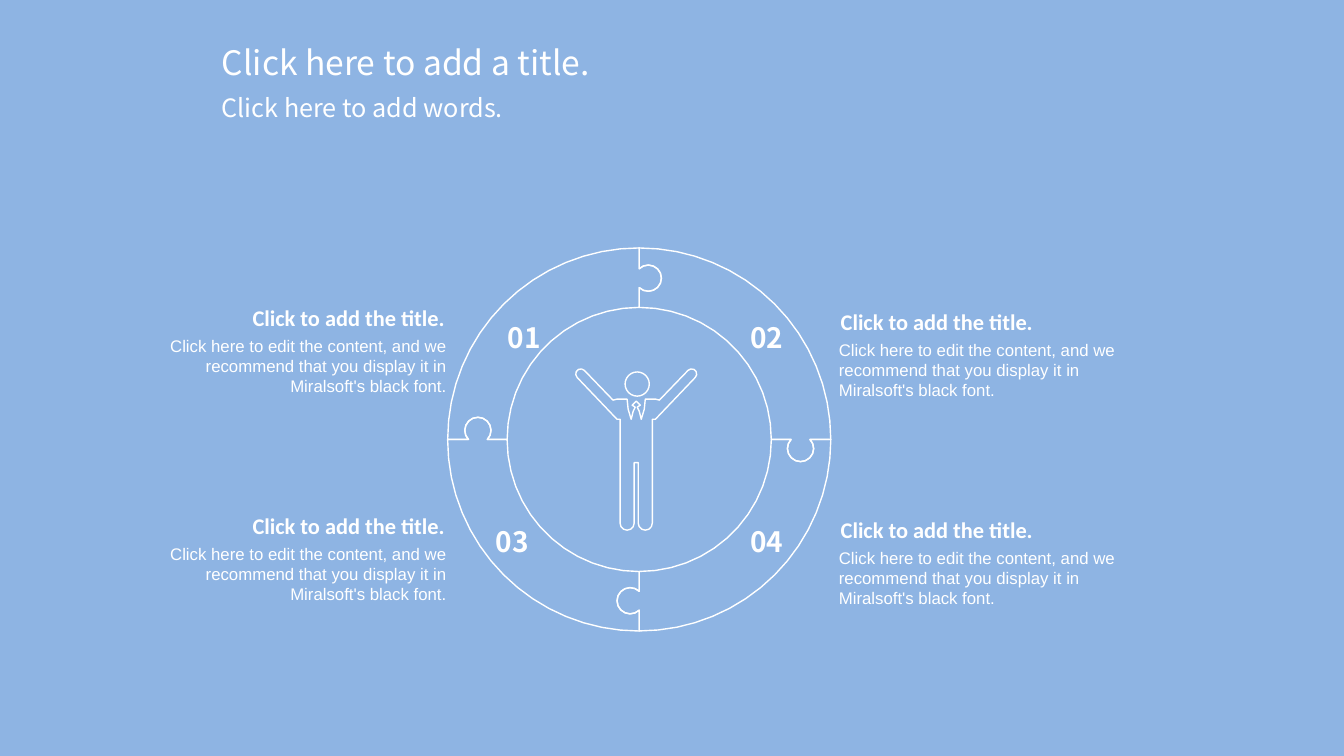
import math
import pptx
import pptx.dml.color
import pptx.enum.shapes
import pptx.enum.text
import pptx.util

SLIDE = (13.33, 7.5)
BACK, WHITE = "8EB4E3", "FFFFFF"
CJK = "Noto Sans CJK SC"
ALIGN = pptx.enum.text.PP_ALIGN
ANCHOR = pptx.enum.text.MSO_ANCHOR

TITLE = "Click here to add a title."
SUBTITLE = "Click here to add words."
HEADING = "Click to add the title."
BODY = ("Click here to edit the content, and we recommend that you "
        "display it in Miralsoft's black font.")

ROW_PITCH = 2.06
COLUMNS = [
    {"align": ALIGN.RIGHT, "heading": (1.86, 2.97, 2.65, 0.36), "body": (1.42, 3.33, 3.01, 0.4)},
    {"align": ALIGN.LEFT, "heading": (8.24, 3.01, 2.61, 0.36), "body": (8.32, 3.37, 3.01, 0.4)},
]
NUMBERS = [("01", 4.99, 3.18), ("02", 7.4, 3.18), ("03", 4.88, 5.2), ("04", 7.4, 5.2)]

CENTRE = (6.34, 4.36)
OUTER, INNER = 1.9, 1.31
KNOB_AT, KNOB_SHIFT, KNOB_R = 1.6, 0.09, 0.13
FLATNESS = 0.25 / 100

FIGURE_X = 6.31
HEAD = (6.2, 3.69, 0.24, 0.24)
TIE_AND_ARM = [(0, 3.98), (0.04, 4.02), (0.01, 4.04), (0.03, 4.08), (0.05, 4.16),
               (0.08, 4.06), (0.09, 3.96), (0.19, 3.96), (0.23, 3.97)]
HAND = (0.55, 3.71, 0.05)
SIDE = [(0.19, 4.16), (0.16, 4.16)]
FOOT = (0.09, 5.19, 0.07)
CROTCH = [(0.02, 4.59)]


def rgb(value):
    return pptx.dml.color.RGBColor.from_string(value)


def inches(values):
    return [pptx.util.Inches(v) for v in values]


def write(sp, text, size, font, bold=False, align=ALIGN.LEFT, anchor=ANCHOR.TOP,
          inset=True, spacing=None):
    tf = sp.text_frame
    tf.word_wrap = True
    tf.auto_size = pptx.enum.text.MSO_AUTO_SIZE.NONE
    tf.vertical_anchor = anchor
    tf.margin_left = tf.margin_right = pptx.util.Inches(0.1 if inset else 0)
    tf.margin_top = tf.margin_bottom = pptx.util.Inches(0.05 if inset else 0)
    p = tf.paragraphs[0]
    p.alignment = align
    r = p.add_run()
    r.text = text
    r.font.size = pptx.util.Pt(size)
    r.font.name = font
    r.font.bold = bold
    r.font.color.rgb = rgb(WHITE)
    if spacing:
        r._r.get_or_add_rPr().set("spc", str(spacing))


def add_text(s, box, text, **style):
    write(s.shapes.add_textbox(*inches(box)), text, **style)


def outline(sp):
    sp.shadow.inherit = False
    sp.fill.background()
    sp.line.color.rgb = rgb(WHITE)
    sp.line.width = pptx.util.Pt(1)


def draw(s, points):
    start, *rest = [inches(point) for point in points]
    builder = s.shapes.build_freeform(*start, scale=1.0)
    builder.add_line_segments(rest, close=True)
    outline(builder.convert_to_shape())


def arc(x, y, radius, start, end):
    widest = 2 * math.degrees(math.acos(1 - FLATNESS / radius))
    steps = math.ceil(abs(end - start) / widest)
    angles = [math.radians(start + (end - start) * i / steps) for i in range(steps + 1)]
    return [(x + radius * math.cos(a), y + radius * math.sin(a)) for a in angles]


def turn(points, degrees):
    c, n = math.cos(math.radians(degrees)), math.sin(math.radians(degrees))
    return [(CENTRE[0] + x * c - y * n, CENTRE[1] + x * n + y * c) for x, y in points]


def puzzle_piece(degrees):
    half = math.degrees(math.acos(-KNOB_SHIFT / KNOB_R))
    knob = arc(KNOB_SHIFT, -KNOB_AT, KNOB_R, -half, half)
    seam = [(0, -OUTER), *knob, (0, -INNER)]
    next_seam = [(-y, x) for x, y in seam]
    points = arc(0, 0, OUTER, -90, 0) + next_seam + arc(0, 0, INNER, 0, -90) + seam[::-1]
    return turn(points, degrees)


def person():
    half = TIE_AND_ARM + arc(*HAND, -135, 45) + SIDE + arc(*FOOT, 0, 180) + CROTCH
    mirrored = [(-x, y) for x, y in reversed(half)]
    return [(FIGURE_X + x, y) for x, y in half + mirrored]


def main():
    prs = pptx.Presentation()
    prs.slide_width, prs.slide_height = inches(SLIDE)
    s = prs.slides.add_slide(prs.slide_layouts[5])
    s.background.fill.solid()
    s.background.fill.fore_color.rgb = rgb(BACK)

    title = s.shapes.title
    title.left, title.top, title.width, title.height = inches((2.1, 0.37, 3.97, 0.5))
    write(title, TITLE, size=24, font=CJK, align=ALIGN.JUSTIFY)
    add_text(s, (2.1, 0.87, 3.97, 0.4), SUBTITLE, size=18, font=CJK)

    for quarter in range(4):
        draw(s, puzzle_piece(90 * quarter))
    outline(s.shapes.add_shape(pptx.enum.shapes.MSO_SHAPE.OVAL, *inches(HEAD)))
    draw(s, person())

    for number, x, y in NUMBERS:
        add_text(s, (x, y, 0.41, 0.34), number, size=20, font=CJK, bold=True,
                 align=ALIGN.CENTER, inset=False, spacing=30)

    for column in COLUMNS:
        for row in range(2):
            x, y, w, h = column["heading"]
            add_text(s, (x, y + row * ROW_PITCH, w, h), HEADING, size=16, font="Calibri",
                     bold=True, align=column["align"], anchor=ANCHOR.MIDDLE)
            x, y, w, h = column["body"]
            add_text(s, (x, y + row * ROW_PITCH, w, h), BODY, size=12, font="Arial",
                     align=column["align"], inset=False)

    prs.save("out.pptx")


if __name__ == "__main__":
    main()
